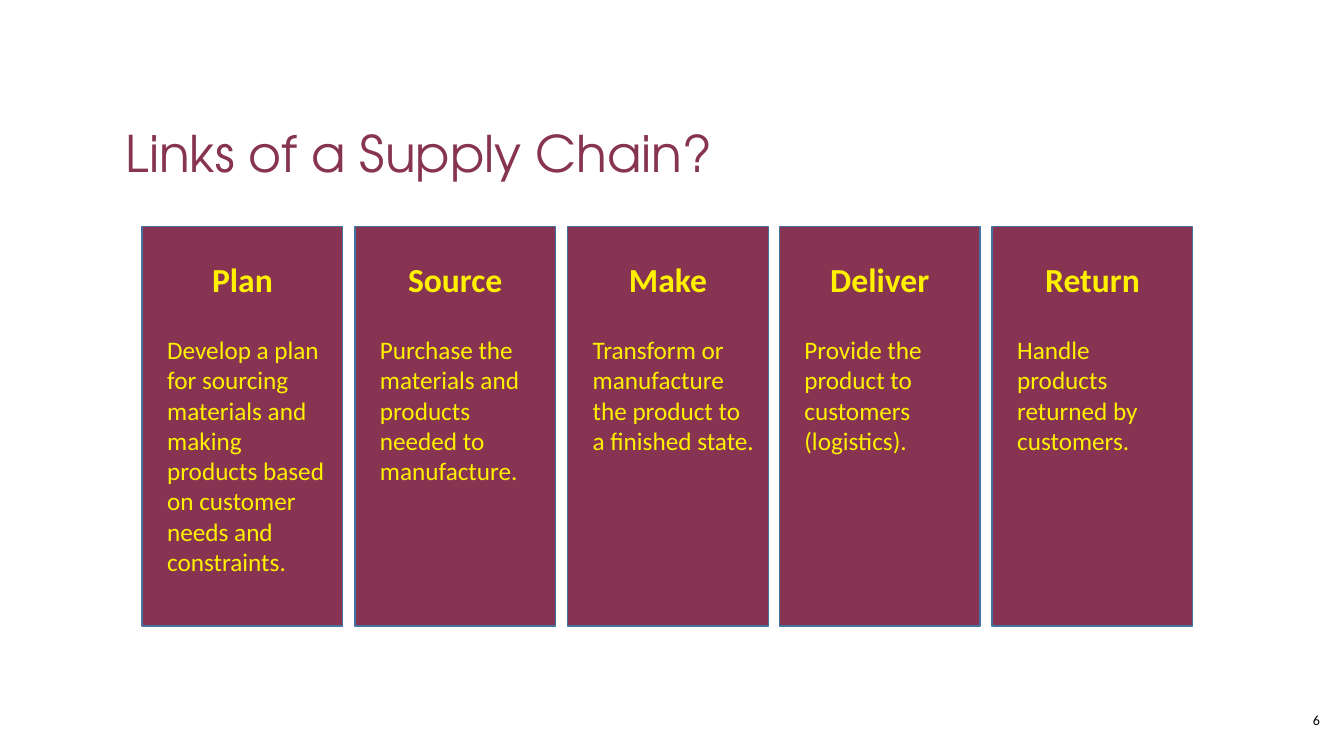
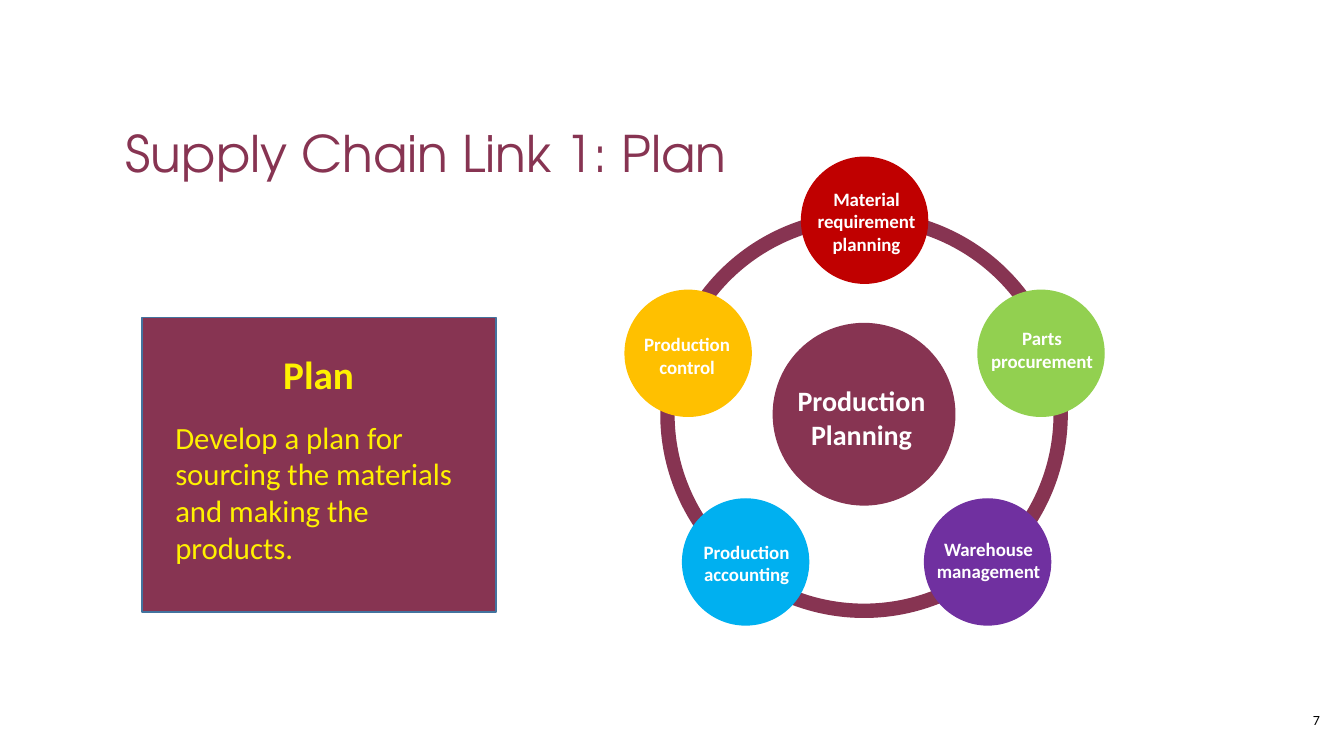
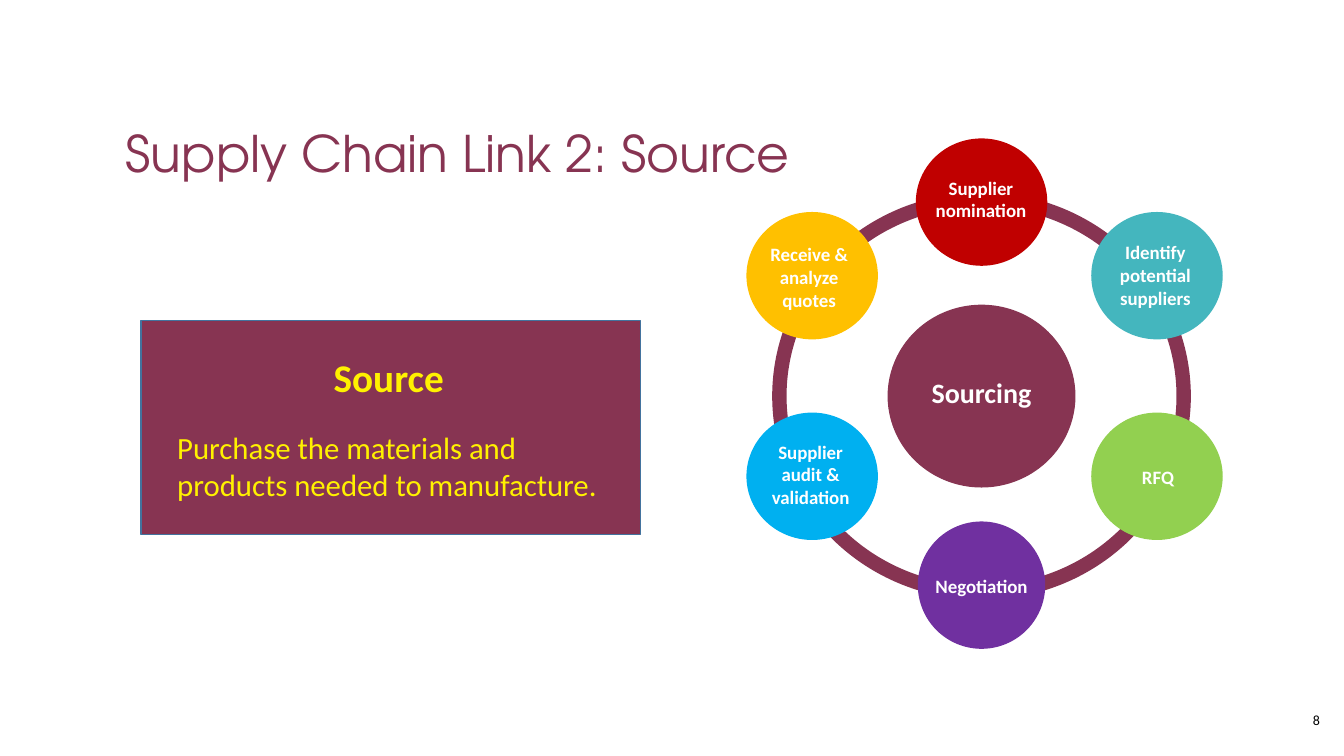
from dataclasses import dataclass

from pptx import Presentation
from pptx.dml.color import RGBColor
from pptx.enum.shapes import MSO_SHAPE
from pptx.enum.text import MSO_ANCHOR, PP_ALIGN
from pptx.util import Emu, Pt

RECT, OVAL = MSO_SHAPE.RECTANGLE, MSO_SHAPE.OVAL
LEFT, CENTER, RIGHT = PP_ALIGN.LEFT, PP_ALIGN.CENTER, PP_ALIGN.RIGHT
TOP, MIDDLE = MSO_ANCHOR.TOP, MSO_ANCHOR.MIDDLE
EMU_PER_PX = 9144


@dataclass(frozen=True)
class Theme:
    """Colours, fonts and type sizes of the deck."""
    plum: str = "873452"
    yellow: str = "FFF100"
    border: str = "43739E"
    white: str = "FFFFFF"
    black: str = "000000"
    amber: str = "FFC000"
    red: str = "C00000"
    green: str = "92D050"
    blue: str = "00B0F0"
    purple: str = "7030A0"
    teal: str = "44B6BE"
    title_font: str = "TeX Gyre Adventor"
    body_font: str = "Calibri"
    title: float = 36
    panel_heading: float = 28
    card_heading: float = 24
    panel_body: float = 22
    hub: float = 20
    card_body: float = 18
    node: float = 13.5
    number: float = 10
    hairline: float = 1
    ring: float = 10.25


T = Theme()

LINKS = [
    ("Plan", "Develop a plan for sourcing materials and making products "
             "based on customer needs and constraints."),
    ("Source", "Purchase the materials and products needed to manufacture."),
    ("Make", "Transform or\vmanufacture the product to a finished state."),
    ("Deliver", "Provide the product to customers (logistics)."),
    ("Return", "Handle products returned by customers."),
]

PLANNING_NODES = [
    ((620, 288, 125, 125), T.amber, "Production\ncontrol", (618, 325, 127, 102)),
    ((795, 156, 125, 125), T.red, "Material\nrequirement\nplanning", (796, 181, 127, 102)),
    ((970, 288, 125, 125), T.green, "Parts\nprocurement", (970, 319, 127, 102)),
    ((677, 495, 125, 125), T.blue, "Production\naccounting", (677, 531, 127, 102)),
    ((917, 495, 125, 125), T.purple, "Warehouse\nmanagement", (917, 528, 127, 102)),
]

SOURCING_NODES = [
    ((741, 211, 129, 125), T.amber, "Receive & analyze quotes", (739, 236, 127, 102)),
    ((909, 138, 129, 125), T.red, "Supplier\nnomination", (908, 170, 130, 102)),
    ((1083, 410, 129, 125), T.green, "RFQ", (1085, 457, 127, 33)),
    ((741, 410, 129, 125), T.blue, "Supplier\naudit & validation", (739, 432, 130, 102)),
    ((911, 518, 125, 125), T.purple, "Negotiation", (910, 565, 127, 44)),
    ((1083, 211, 129, 125), T.teal, "Identify potential suppliers", (1081, 234, 130, 102)),
]


def emu(box):
    """Turn px lengths into EMU."""
    return [Emu(v * EMU_PER_PX) for v in box]


def add_text(s, box, text, size, color, align=LEFT, bold=False,
             font=T.body_font, anchor=TOP, spacing=None):
    """Add a wrapping text box with one style; each line is a paragraph."""
    tf = s.shapes.add_textbox(*emu(box)).text_frame
    tf.word_wrap = True
    tf.vertical_anchor = anchor
    tf.text = text
    for p in tf.paragraphs:
        p.alignment = align
        p.line_spacing = spacing
        p.font.name = font
        p.font.size = Pt(size)
        p.font.bold = bold
        p.font.color.rgb = RGBColor.from_string(color)


def add_shape(s, kind, box, fill, line, width=T.hairline):
    """Add a flat shape; a fill of None leaves it open."""
    sp = s.shapes.add_shape(kind, *emu(box))
    sp.shadow.inherit = False
    if fill is None:
        sp.fill.background()
    else:
        sp.fill.solid()
        sp.fill.fore_color.rgb = RGBColor.from_string(fill)
    sp.line.color.rgb = RGBColor.from_string(line)
    sp.line.width = Pt(width)


def add_slide(prs, title, number):
    """Add a slide with its title and slide number."""
    s = prs.slides.add_slide(prs.slide_layouts[6])
    add_text(s, (1173, 701, 146, 27), str(number), T.number, T.black, RIGHT)
    add_text(s, (115, 105, 1108, 100), title, T.title, T.plum,
             font=T.title_font, anchor=MIDDLE, spacing=0.9)
    return s


def add_card(s, box, heading, heading_box, body, body_box, sizes):
    """Add a plum card with a centred heading and body text."""
    add_shape(s, RECT, box, T.plum, T.border)
    add_text(s, heading_box, heading, sizes[0], T.yellow, CENTER, True)
    add_text(s, body_box, body, sizes[1], T.yellow)


def add_ring(s, ring_box, nodes, hub_box, hub_text, hub_text_box):
    """Add a ring of labelled nodes around a hub."""
    add_shape(s, OVAL, ring_box, None, T.plum, T.ring)
    for box, color, _, _ in nodes:
        add_shape(s, OVAL, box, color, color)
    add_shape(s, OVAL, hub_box, T.plum, T.plum)
    for _, _, label, label_box in nodes:
        add_text(s, label_box, label, T.node, T.white, CENTER, True)
    add_text(s, hub_text_box, hub_text, T.hub, T.white, CENTER, True)


def links_slide(prs, number):
    """Show the five links as evenly spaced cards."""
    s = add_slide(prs, "Links of a Supply Chain?", number)
    first, last, width = 141, 984, 199
    for i, (heading, body) in enumerate(LINKS):
        x = first + round(i * (last - first) / (len(LINKS) - 1))
        add_card(s, (x, 225, width, 396), heading, (x, 252, width, 60),
                 body, (x + 15, 327, 180, 254), (T.card_heading, T.card_body))


def plan_slide(prs, number):
    """Show the planning link and its activities."""
    s = add_slide(prs, "Supply Chain Link 1: Plan", number)
    add_card(s, (141, 315, 351, 292), "Plan", (164, 343, 304, 60),
             "Develop a plan for sourcing the materials and making the products.",
             (164, 410, 304, 145), (T.panel_heading, T.panel_body))
    add_ring(s, (662, 216, 390, 390), PLANNING_NODES, (767, 321, 180, 180),
             "Production\nPlanning", (780, 376, 149, 102))


def source_slide(prs, number):
    """Show the sourcing link and its activities."""
    s = add_slide(prs, "Supply Chain Link 2: Source", number)
    add_card(s, (140, 318, 495, 212), "Source", (138, 346, 495, 60),
             LINKS[1][1], (166, 420, 437, 98), (T.panel_heading, T.panel_body))
    add_ring(s, (773, 198, 401, 390), SOURCING_NODES, (881, 303, 185, 180),
             "Sourcing", (897, 368, 153, 62))


def main():
    """Build and save the deck."""
    prs = Presentation()
    prs.slide_width, prs.slide_height = emu((1333, 750))
    for number, build in enumerate((links_slide, plan_slide, source_slide), 6):
        build(prs, number)
    prs.save("out.pptx")


if __name__ == "__main__":
    main()
